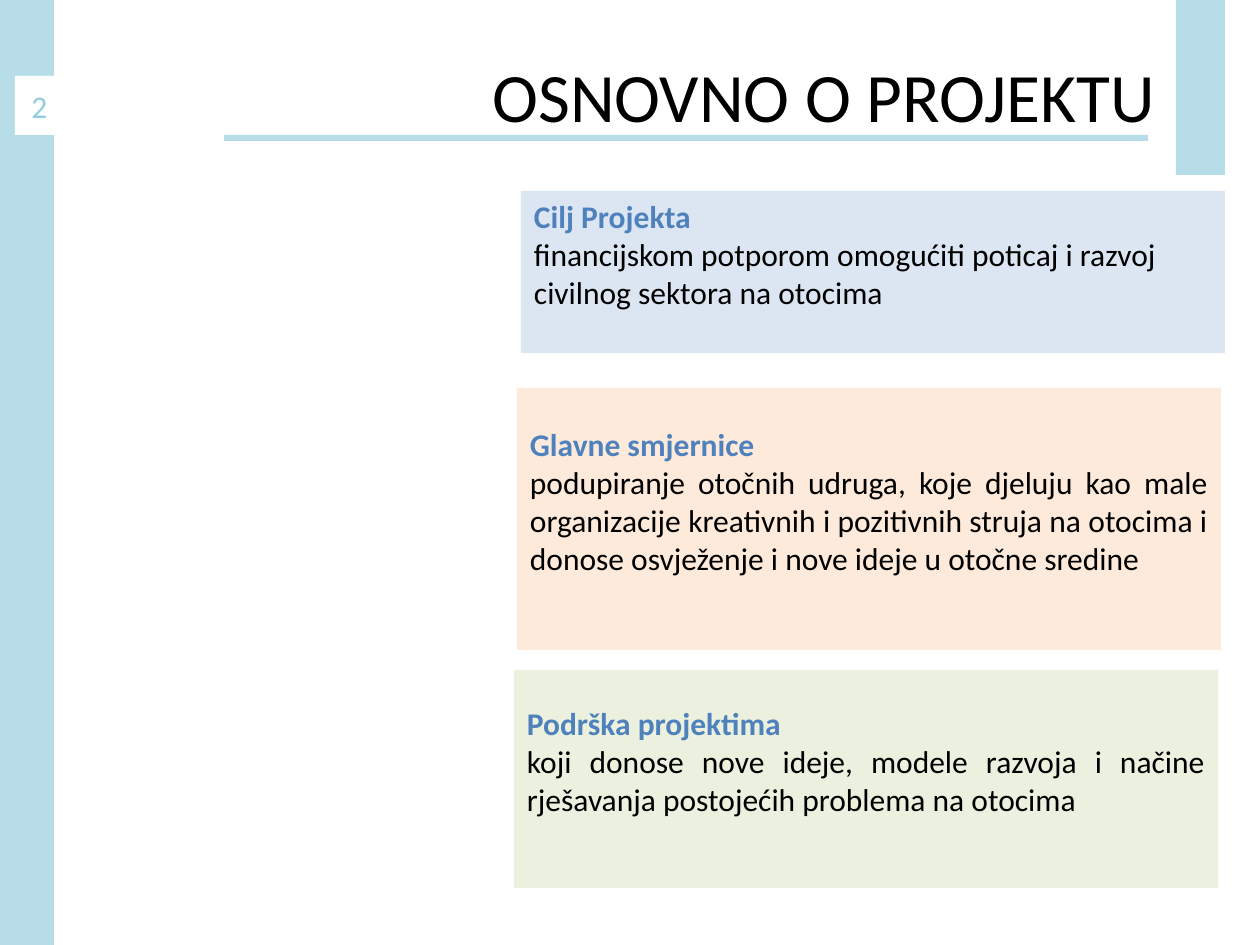
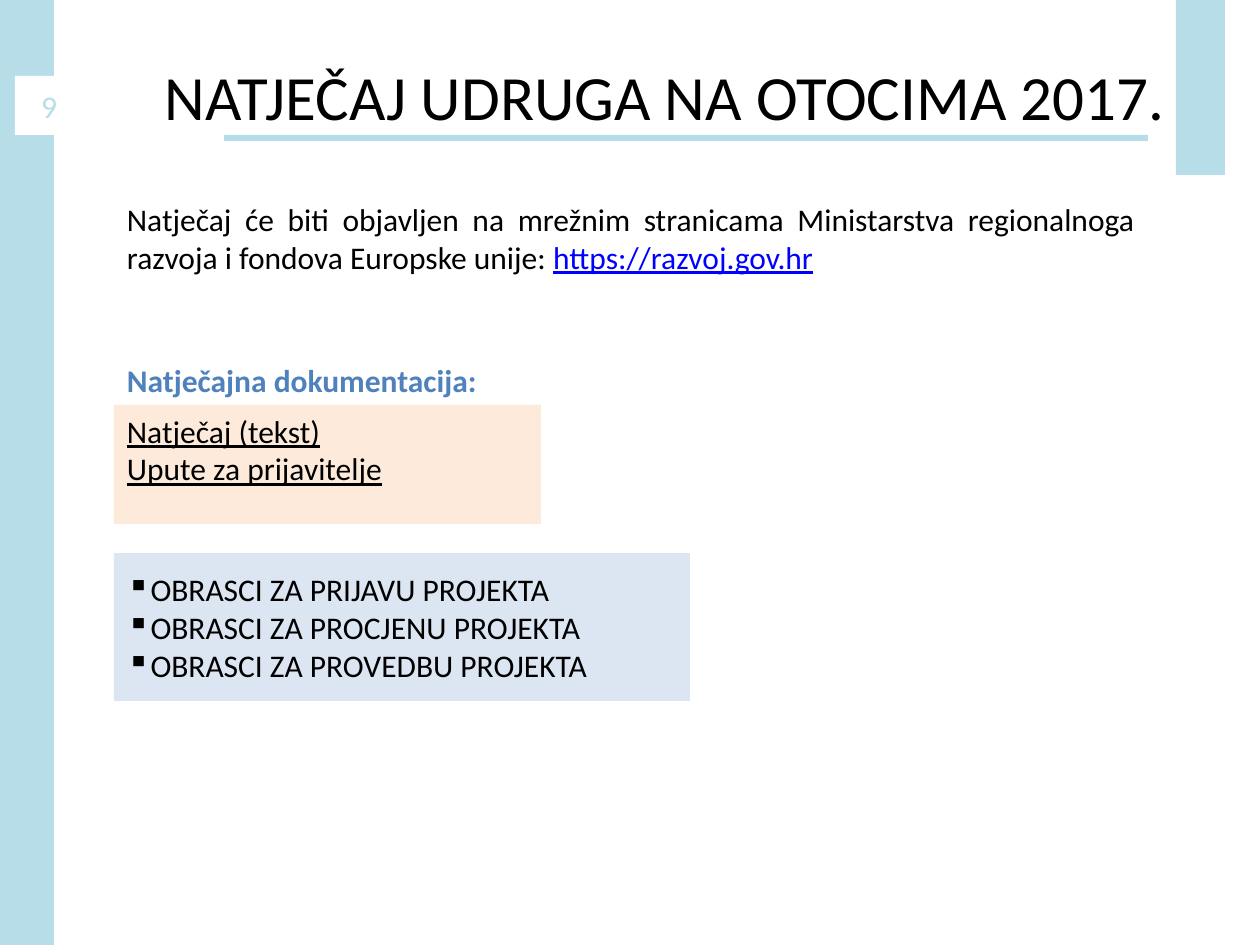
from pptx import Presentation
from pptx import util as u
from pptx.dml.color import RGBColor
from pptx.enum import shapes, text
from pptx.oxml.ns import qn
from lxml import etree

PX = 914400 / 126
FONT = "Calibri"
AQUA, TEAL, WHITE, BLACK = "B7DEE8", "93CDDD", "FFFFFF", "000000"
BLUE, LINK = "4F81BD", "0000FF"
PALE_BLUE, PALE_ORANGE, PALE_GREEN = "DCE6F2", "FDEADA", "EBF1DE"
LEFT, CENTER, RIGHT, JUSTIFY = (text.PP_ALIGN.LEFT, text.PP_ALIGN.CENTER,
                                text.PP_ALIGN.RIGHT, text.PP_ALIGN.JUSTIFY)
TOP, MIDDLE = text.MSO_ANCHOR.TOP, text.MSO_ANCHOR.MIDDLE


def px(n):
    """Turn px into EMU."""
    return u.Emu(round(n * PX))


def rgb(value):
    """Turn a hex string into a colour."""
    return RGBColor.from_string(value)


def set_bullet(p, char, indent):
    """Give a paragraph a hanging bullet."""
    pPr = p._p.get_or_add_pPr()
    pPr.set("marL", str(px(indent)))
    pPr.set("indent", str(-px(indent)))
    etree.SubElement(pPr, qn("a:buChar")).set("char", char)


def write(sp, paragraphs, size=18, color=BLACK, align=LEFT, anchor=MIDDLE,
          insets=(13, 6, 13, 6), bullet=None):
    """Fill a shape with paragraphs, each a list of (text, format) runs."""
    tf = sp.text_frame
    tf.word_wrap = True
    tf.auto_size = text.MSO_AUTO_SIZE.NONE
    tf.vertical_anchor = anchor
    tf.margin_left, tf.margin_top, tf.margin_right, tf.margin_bottom = map(px, insets)
    for i, runs in enumerate(paragraphs):
        p = tf.add_paragraph() if i else tf.paragraphs[0]
        p.alignment = align
        if bullet:
            set_bullet(p, bullet, 18)
        for words, fmt in runs:
            r = p.add_run()
            r.text = words
            r.font.name, r.font.size = FONT, u.Pt(size)
            r.font.bold = fmt.get("bold", False)
            r.font.underline = fmt.get("underline", False)
            r.font.color.rgb = rgb(fmt.get("color", color))


def add_rect(s, box, fill):
    """Add a plain filled rectangle."""
    sp = s.shapes.add_shape(shapes.MSO_SHAPE.RECTANGLE, *map(px, box))
    sp.shadow.inherit = False
    sp.fill.solid()
    sp.fill.fore_color.rgb = rgb(fill)
    sp.line.fill.background()
    return sp


def add_textbox(s, box, paragraphs, **fmt):
    """Add a text box."""
    write(s.shapes.add_textbox(*map(px, box)), paragraphs, anchor=TOP, **fmt)


def add_base(prs, title, size, right_inset, number, number_width, number_color):
    """Add a slide with its title, bands and page number."""
    s = prs.slides.add_slide(prs.slide_layouts[5])
    sp = s.shapes.title
    sp.left, sp.top, sp.width, sp.height = map(px, (64, 16, 1134, 158))
    write(sp, [[(title, {})]], size=size, align=RIGHT, insets=(13, 6, right_inset, 6))
    for band in ((0, 0, 54, 945), (224, 135, 924, 6), (1176, 0, 49, 175)):
        add_rect(s, band, AQUA)
    sp = add_rect(s, (15, 76, number_width, 59), WHITE)
    write(sp, [[(number, {})]], color=number_color, align=CENTER, insets=(0, 0, 0, 0))
    return s


def add_card(s, box, fill, heading, body, align):
    """Add a coloured card with a bold heading over its body."""
    write(add_rect(s, box, fill),
          [[(heading, {"bold": True, "color": BLUE})], [(body, {})]],
          align=align, insets=(13, 6, 13, 42))


def build_about(prs):
    """Build the slide on the basics of the project."""
    s = add_base(prs, "OSNOVNO O PROJEKTU", 39.6, 43, "2", 49, TEAL)
    cards = (
        (521, 191, 162, PALE_BLUE, LEFT, "Cilj Projekta",
         "financijskom potporom omogućiti poticaj i razvoj civilnog sektora na otocima"),
        (517, 388, 262, PALE_ORANGE, JUSTIFY, "Glavne smjernice",
         "podupiranje otočnih udruga, koje djeluju kao male organizacije kreativnih i "
         "pozitivnih struja na otocima i donose osvježenje i nove ideje u otočne sredine"),
        (514, 670, 218, PALE_GREEN, JUSTIFY, "Podrška projektima",
         "koji donose nove ideje, modele razvoja i načine rješavanja postojećih "
         "problema na otocima"),
    )
    for left, top, height, fill, align, heading, body in cards:
        add_card(s, (left, top, 704, height), fill, heading, body, align)


def build_call(prs):
    """Build the slide on the call and its documents."""
    s = add_base(prs, "NATJEČAJ UDRUGA NA OTOCIMA 2017.", 36, 33, "9", 68, AQUA)
    left = 114
    add_textbox(s, (left, 194, 1034, 89), [[
        ("Natječaj će biti objavljen na mrežnim stranicama Ministarstva regionalnoga "
         "razvoja i fondova Europske unije: ", {}),
        ("https://razvoj.gov.hr", {"color": LINK, "underline": True})]], align=JUSTIFY)
    add_textbox(s, (left, 355, 630, 50),
                [[("Natječajna dokumentacija:", {"bold": True, "color": BLUE})]])
    documents = ("Natječaj (tekst)", "Upute za prijavitelje")
    write(add_rect(s, (left, 405, 427, 119), PALE_ORANGE),
          [[(name, {"underline": True})] for name in documents], insets=(13, 6, 13, 36))
    stages = ("PRIJAVU", "PROCJENU", "PROVEDBU")
    write(add_rect(s, (left, 553, 576, 148), PALE_BLUE),
          [[(f"OBRASCI ZA {stage} PROJEKTA", {})] for stage in stages], bullet="▪")


def main():
    """Build and save the presentation."""
    prs = Presentation()
    prs.slide_width, prs.slide_height = px(1260), px(945)
    build_about(prs)
    build_call(prs)
    prs.save("out.pptx")


if __name__ == "__main__":
    main()
